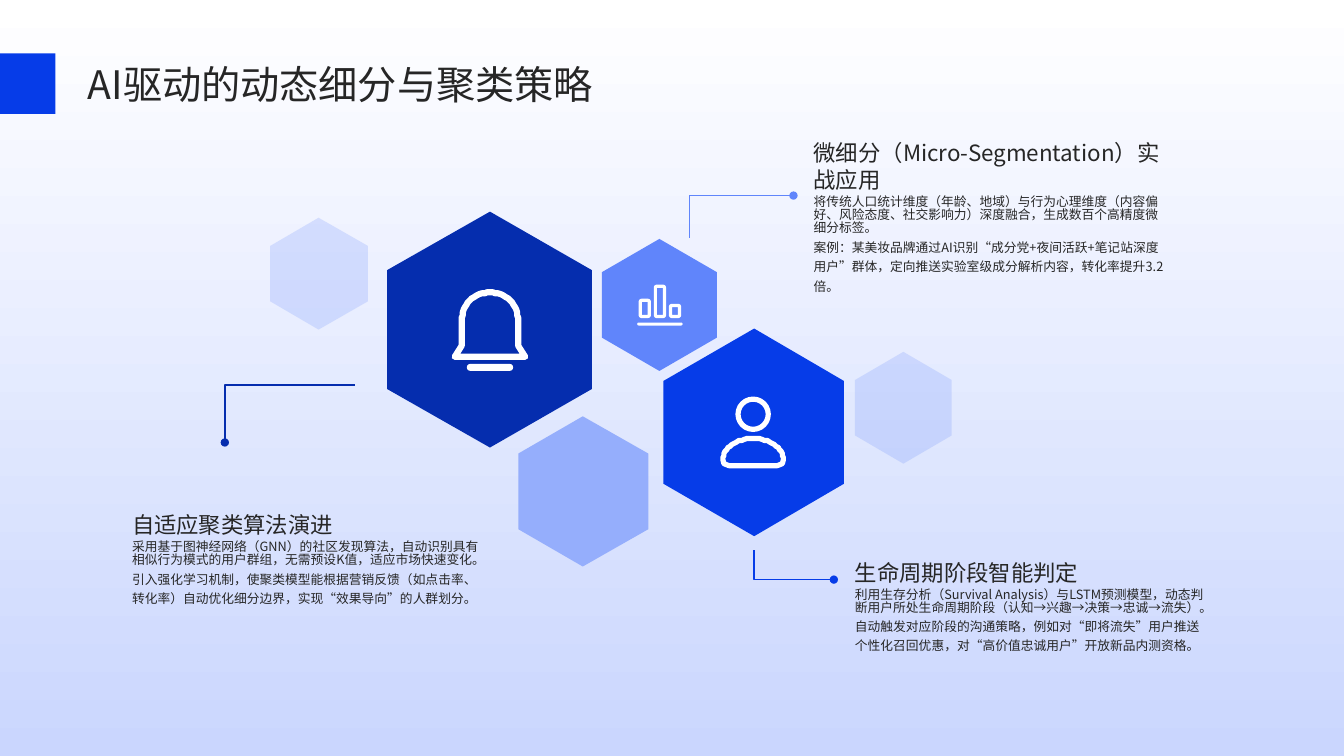
"""Builds the slide on AI-driven dynamic segmentation and clustering strategy."""
from math import cos, pi, sin

from lxml.etree import SubElement
from pptx import Presentation
from pptx.dml.color import RGBColor
from pptx.enum.shapes import MSO_SHAPE
from pptx.enum.text import MSO_ANCHOR
from pptx.oxml.ns import qn
from pptx.util import Pt

PX = 9144
WIDTH, HEIGHT = 1333, 750
FONT = "Noto Sans CJK SC"
COLORS = {
    "white": "FFFFFF", "mist": "CAD6FE", "ink": "262626", "navy": "052DAE",
    "royal": "063CE8", "sky": "6085FB", "pale": "95AEFC",
}
HEXAGONS = [
    ((514, 413, 129, 149), "pale", None),
    ((384, 210, 203, 234), "navy", None),
    ((597, 237, 114, 131), "sky", None),
    ((658, 326, 179, 206), "royal", None),
    ((848, 349, 96, 111), "sky", 20),
    ((268, 216, 97, 111), "sky", 20),
]
LEADERS = [
    ([(352, 382), (223, 382), (223, 439)], "navy"),
    ([(684, 236), (684, 194), (787, 194)], "sky"),
    ([(748, 546), (748, 575), (827, 575)], "royal"),
]
TOPICS = [
    ((807, 116), "微细分（Micro-Segmentation）实战应用", [
        "将传统人口统计维度（年龄、地域）与行为心理维度（内容偏好、风险态度、社交影响力）深度融合，生成数百个高精度微细分标签。",
        "案例：某美妆品牌通过AI识别“成分党+夜间活跃+笔记站深度用户”群体，定向推送实验室级成分解析内容，转化率提升3.2倍。"]),
    ((848, 505), "生命周期阶段智能判定", [
        "利用生存分析（Survival Analysis）与LSTM预测模型，动态判断用户所处生命周期阶段（认知→兴趣→决策→忠诚→流失）。",
        "自动触发对应阶段的沟通策略，例如对“即将流失”用户推送个性化召回优惠，对“高价值忠诚用户”开放新品内测资格。"]),
    ((131, 458), "自适应聚类算法演进", [
        "采用基于图神经网络（GNN）的社区发现算法，自动识别具有相似行为模式的用户群组，无需预设K值，适应市场快速变化。",
        "引入强化学习机制，使聚类模型能根据营销反馈（如点击率、转化率）自动优化细分边界，实现“效果导向”的人群划分。"]),
]


def rgb(name):
    """Return the named palette colour."""
    return RGBColor.from_string(COLORS[name])


def paint(shape, fill=None, line=None, weight=1):
    """Set fill and outline, with round joins and no shadow."""
    shape.shadow.inherit = False
    if fill:
        shape.fill.solid()
        shape.fill.fore_color.rgb = rgb(fill)
    else:
        shape.fill.background()
    if line:
        shape.line.color.rgb = rgb(line)
        shape.line.width = Pt(weight)
        SubElement(shape.line._get_or_add_ln(), qn("a:round"))
    else:
        shape.line.fill.background()
    return shape


def add_preset(slide, kind, box, **look):
    """Add a painted preset shape in a px box."""
    return paint(slide.shapes.add_shape(kind, *(v * PX for v in box)), **look)


def add_outline(slide, points, close=True, **look):
    """Add a painted freeform through px points."""
    builder = slide.shapes.build_freeform(*points[0], scale=PX)
    builder.add_line_segments(points[1:], close=close)
    return paint(builder.convert_to_shape(), **look)


def add_text(slide, box, paragraphs, size, spacings, anchor):
    """Add a wrapped text box with one line spacing per paragraph."""
    frame = slide.shapes.add_textbox(*(v * PX for v in box)).text_frame
    frame.word_wrap = True
    frame.vertical_anchor = anchor
    frame.margin_left = frame.margin_right = frame.margin_top = frame.margin_bottom = 0
    frame.text = "\n".join(paragraphs)
    for paragraph, spacing in zip(frame.paragraphs, spacings):
        paragraph.line_spacing = spacing
        for run in paragraph.runs:
            run.font.size = Pt(size)
            run.font.name = FONT
            run.font.color.rgb = rgb("ink")
            SubElement(run._r.get_or_add_rPr(), qn("a:ea"), typeface=FONT)


def add_backdrop(slide, box):
    """Fill the box with a vertical gradient."""
    backdrop = add_preset(slide, MSO_SHAPE.RECTANGLE, box)
    backdrop.fill.gradient()
    backdrop.fill.gradient_angle = 270
    for stop, color, position in zip(backdrop.fill.gradient_stops, ("white", "mist"), (0, 1)):
        stop.color.rgb = rgb(color)
        stop.position = position


def add_header(slide, box):
    """Add the slide title and the accent block at the left edge."""
    left, top, width, height = box
    add_text(slide, (left + 87, top + 2, width - 145, height - 9),
             ["AI驱动的动态细分与聚类策略"], 28, [1.1], MSO_ANCHOR.MIDDLE)
    add_preset(slide, MSO_SHAPE.RECTANGLE, (left, top, 55, height), fill="royal")


def add_hexagon(slide, box, color, opacity):
    """Add a point-up hexagon that fills the box."""
    left, top, width, height = box
    corners = [(0, 3), (2, 4), (4, 3), (4, 1), (2, 0), (0, 1)]
    points = [(left + width * x / 4, top + height * y / 4) for x, y in corners]
    hexagon = add_outline(slide, points, fill=color)
    if opacity:
        tint = hexagon.fill._xPr.find(qn("a:solidFill"))[0]
        SubElement(tint, qn("a:alpha"), val=str(opacity * 1000))


def arch(cx, cy, rx, ry, steps=32):
    """Return points along an upper half ellipse from left to right."""
    return [(cx - rx * cos(pi * i / steps), cy - ry * sin(pi * i / steps))
            for i in range(steps + 1)]


def add_bell(slide, left, top):
    """Draw the bell icon from its top left corner."""
    dome = arch(left + 39, top + 31, 28, 28)
    skirt = [(left + 67, top + 56), (left + 74, top + 67),
             (left + 4, top + 67), (left + 11, top + 56)]
    add_outline(slide, dome + skirt, line="white", weight=4.4)
    clapper = add_preset(slide, MSO_SHAPE.ROUNDED_RECTANGLE,
                         (left + 16, top + 74, 46, 7), fill="white")
    clapper.adjustments[0] = 0.5


def add_bars(slide, left, top):
    """Draw the bar chart icon from its top left corner."""
    for index, height in enumerate((16, 30, 11)):
        bar = add_preset(slide, MSO_SHAPE.ROUNDED_RECTANGLE,
                         (left + 3 + 15 * index, top + 32 - height, 9, height),
                         line="white", weight=2.3)
        bar.adjustments[0] = 0.15
    axis = add_preset(slide, MSO_SHAPE.ROUNDED_RECTANGLE,
                      (left, top + 38, 45, 3), fill="white")
    axis.adjustments[0] = 0.5


def add_person(slide, left, top):
    """Draw the person icon from its top left corner."""
    add_preset(slide, MSO_SHAPE.OVAL, (left + 18, top + 3, 30, 30),
               line="white", weight=3.7)
    shoulders = arch(left + 33, top + 63, 30, 21)
    hem = [(left + 62, top + 67), (left + 57, top + 69),
           (left + 9, top + 69), (left + 4, top + 67)]
    add_outline(slide, shoulders + hem, line="white", weight=3.7)


def add_leader(slide, points, color):
    """Draw a bent leader line that ends in a dot."""
    leader = add_outline(slide, points, close=False, line=color)
    SubElement(leader.line._get_or_add_ln(), qn("a:tailEnd"), type="oval")


def add_topic(slide, corner, heading, details):
    """Place a heading and its two paragraphs below the corner."""
    left, top = corner
    add_text(slide, (left, top, 354, 76), [heading], 16, [1.02], MSO_ANCHOR.BOTTOM)
    add_text(slide, (left, top + 79, 354, 118), details, 9.1, [0.85, 1.27], MSO_ANCHOR.TOP)


def main():
    """Build the slide and save it."""
    deck = Presentation()
    deck.slide_width, deck.slide_height = WIDTH * PX, HEIGHT * PX
    slide = deck.slides.add_slide(deck.slide_layouts[6])
    add_backdrop(slide, (0, 0, WIDTH, HEIGHT))
    for topic in TOPICS:
        add_topic(slide, *topic)
    for hexagon in HEXAGONS:
        add_hexagon(slide, *hexagon)
    add_bell(slide, 447, 287)
    add_bars(slide, 632, 282)
    add_person(slide, 714, 393)
    for leader in LEADERS:
        add_leader(slide, *leader)
    add_header(slide, (0, 53, WIDTH, 60))
    deck.save("out.pptx")


if __name__ == "__main__":
    main()
